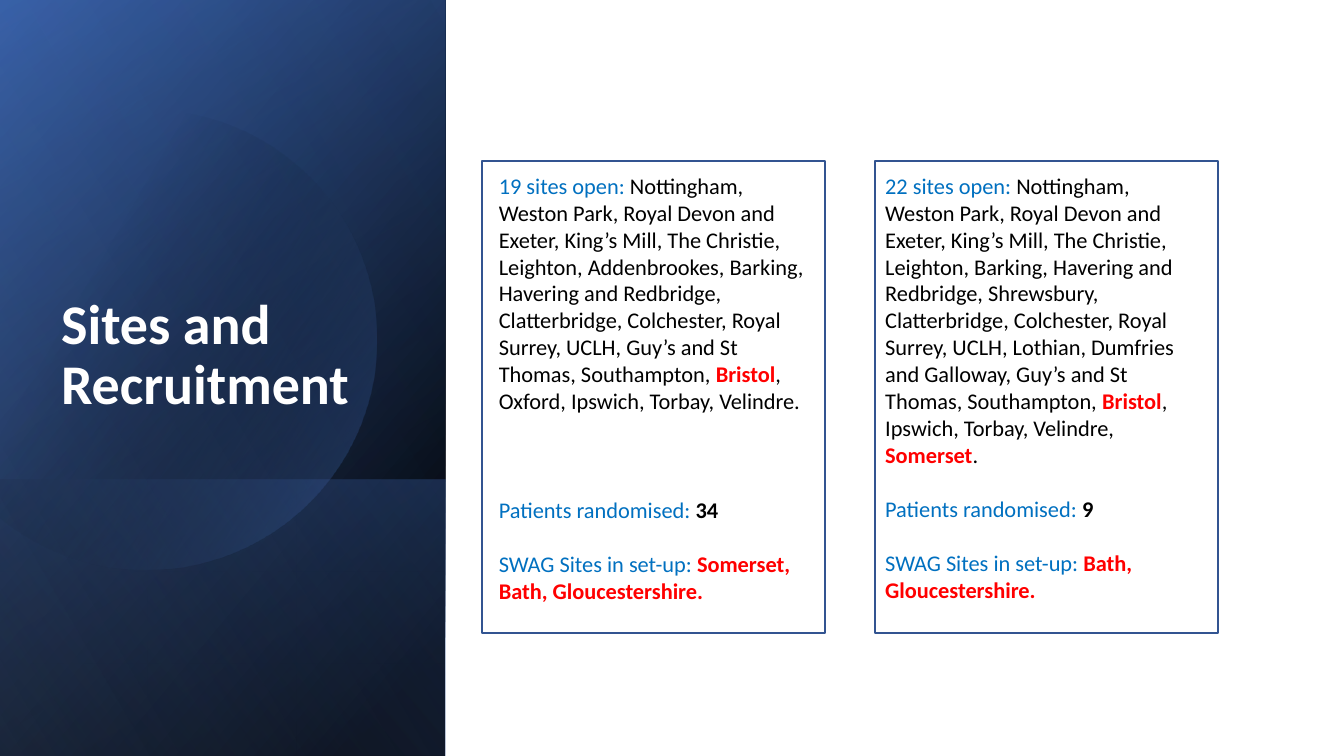
from math import acos, cos, sin

from lxml.etree import SubElement
from pptx import Presentation
from pptx.dml.color import RGBColor
from pptx.enum.shapes import MSO_SHAPE
from pptx.enum.text import MSO_ANCHOR, MSO_AUTO_SIZE
from pptx.oxml.ns import qn
from pptx.util import Inches, Pt

COLS, ROWS = 160, 90
WIDTH, HEIGHT = Inches(13.333), Inches(7.5)
FONT = "Calibri"
HUES = {
    "white": "FFFFFF", "black": "000000", "navy": "2F5597", "blue": "4472C4",
    "pale": "8FAADC", "edge": "325491", "label": "0070C0", "red": "FF0000",
}
PANEL = (0, 0, 53, 90)
BAND = (0, 57.1, 53, 32.9)
DISC = (17.4, 40.4, 27.4)

OPEN_LEFT = [
    ("19 sites open: ", "label"),
    ("Nottingham, Weston Park, Royal Devon and Exeter, King’s Mill, The Christie, "
     "Leighton, Addenbrookes, Barking, Havering and Redbridge, Clatterbridge, "
     "Colchester, Royal Surrey, UCLH, Guy’s and St Thomas, Southampton, ", "black"),
    ("Bristol", "red"),
    (", Oxford, Ipswich, Torbay, Velindre.", "black"),
]
OPEN_RIGHT = [
    ("22 sites open:", "label"),
    (" Nottingham, Weston Park, Royal Devon and Exeter, King’s Mill, The Christie, "
     "Leighton, Barking, Havering and Redbridge, Shrewsbury, Clatterbridge, "
     "Colchester, Royal Surrey, UCLH, Lothian, Dumfries and Galloway, "
     "Guy’s and St Thomas, Southampton, ", "black"),
    ("Bristol", "red"),
    (", Ipswich, Torbay, Velindre, ", "black"),
    ("Somerset", "red"),
    (".", "black"),
]
CARDS = [
    (57.4, 58.2, 52.9, OPEN_LEFT, 58.5, "34", "Somerset, Bath, Gloucestershire."),
    (104.2, 104.2, 59.4, OPEN_RIGHT, 19.5, "9", "Bath, Gloucestershire."),
]


def hue(name):
    return RGBColor.from_string(HUES[name])


def across(cols):
    return round(WIDTH * cols / COLS)


def down(rows):
    return round(HEIGHT * rows / ROWS)


def place(left, top, width, height):
    return across(left), down(top), across(width), down(height)


def shade(shape, angle, stops):
    shape.shadow.inherit = False
    shape.line.fill.background()
    shape.fill.background()
    props = shape.fill._xPr
    blank = props.find(qn("a:noFill"))
    grad = SubElement(props, qn("a:gradFill"), rotWithShape="1")
    props.replace(blank, grad)
    chain = SubElement(grad, qn("a:gsLst"))
    for pos, name, alpha in stops:
        stop = SubElement(chain, qn("a:gs"), pos=str(pos * 1000))
        tint = SubElement(stop, qn("a:srgbClr"), val=HUES[name])
        if alpha < 100:
            SubElement(tint, qn("a:alpha"), val=str(alpha * 1000))
    SubElement(grad, qn("a:lin"), ang=str(angle * 60000), scaled="0")


def layer(slide, area, angle, stops):
    shape = slide.shapes.add_shape(MSO_SHAPE.RECTANGLE, *place(*area))
    shade(shape, angle, stops)


def disc(slide, angle, stops, steps=96):
    mid_x, mid_y, radius = DISC
    limit = acos(-mid_x / radius)
    turns = [limit * (2 * i / steps - 1) for i in range(steps + 1)]
    points = [(across(mid_x + radius * cos(t)), down(mid_y + radius * sin(t)))
              for t in turns]
    path = slide.shapes.build_freeform(*points[0])
    path.add_line_segments(points[1:], close=True)
    shade(path.convert_to_shape(), angle, stops)


def frame(slide, area):
    box = slide.shapes.add_shape(MSO_SHAPE.RECTANGLE, *place(*area))
    box.shadow.inherit = False
    box.fill.solid()
    box.fill.fore_color.rgb = hue("white")
    box.line.color.rgb = hue("edge")
    box.line.width = Pt(1.35)


def text_box(slide, area):
    body = slide.shapes.add_textbox(*place(*area)).text_frame
    body.word_wrap = True
    return body


def title(slide, area, words):
    body = text_box(slide, area)
    body.vertical_anchor = MSO_ANCHOR.BOTTOM
    para = body.paragraphs[0]
    para.text = words
    para.line_spacing = 0.9
    font = para.font
    font.name, font.size, font.bold = FONT, Pt(40), True
    font.color.rgb = hue("white")


def write(para, parts, gap):
    para.font.name, para.font.size = FONT, Pt(16)
    para.space_before = Pt(gap)
    for words, name, *bold in parts:
        run = para.add_run()
        run.text = words
        run.font.color.rgb = hue(name)
        run.font.bold = name == "red" or bool(bold)


def card(slide, left, inner, height, sites, gap, count, setup):
    body = text_box(slide, (inner, 19.9, 39, height))
    body.auto_size = MSO_AUTO_SIZE.SHAPE_TO_FIT_TEXT
    write(body.paragraphs[0], sites, 0)
    write(body.add_paragraph(),
          [("Patients randomised: ", "label"), (count, "black", True)], gap)
    write(body.add_paragraph(),
          [("SWAG Sites in set-up: ", "label"), (setup, "red")], 19.5)


def main():
    deck = Presentation()
    deck.slide_width, deck.slide_height = WIDTH, HEIGHT
    slide = deck.slides.add_slide(deck.slide_layouts[6])
    layer(slide, PANEL, 220, [(8, "black", 100), (100, "navy", 100)])
    layer(slide, PANEL, 240, [(0, "black", 0), (99, "blue", 46)])
    layer(slide, BAND, 140, [(2, "blue", 29), (100, "black", 30)])
    disc(slide, 30, [(29, "black", 0), (100, "blue", 43)])
    layer(slide, PANEL, 150, [(0, "black", 0), (99, "pale", 11)])
    title(slide, (6.1, 7.7, 42, 42.5), "Sites and Recruitment")
    for item in CARDS:
        frame(slide, (item[0], 19.2, 40.8, 56.2))
    for item in CARDS:
        card(slide, *item)
    deck.save("out.pptx")


if __name__ == "__main__":
    main()
